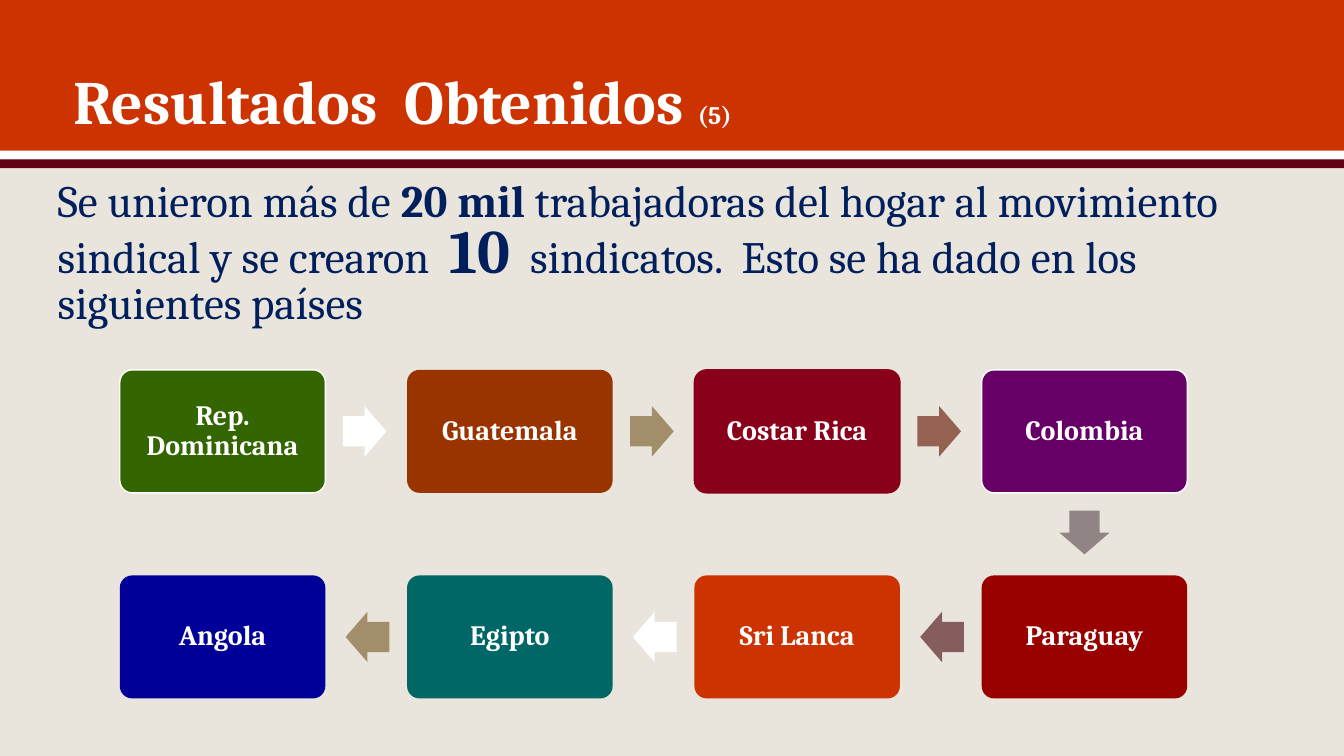
from pptx import Presentation
from pptx.dml.color import RGBColor
from pptx.enum.shapes import MSO_SHAPE
from pptx.enum.text import MSO_ANCHOR, MSO_AUTO_SIZE, PP_ALIGN
from pptx.oxml.ns import qn
from pptx.util import Cm, Pt
from lxml import etree

RECTANGLE = MSO_SHAPE.RECTANGLE
ROUNDED = MSO_SHAPE.ROUNDED_RECTANGLE
ARROW = MSO_SHAPE.RIGHT_ARROW
MIDDLE, BOTTOM = MSO_ANCHOR.MIDDLE, MSO_ANCHOR.BOTTOM
LEFT, CENTER = PP_ALIGN.LEFT, PP_ALIGN.CENTER
NO_AUTOFIT = MSO_AUTO_SIZE.NONE

COLORS = {
    "background": "E9E5DC", "orange": "CC3300", "white": "FFFFFF",
    "wine": "600012", "navy": "001F5C", "green": "336600",
    "brown": "993300", "crimson": "89001A", "purple": "660066",
    "red": "990000", "teal": "006666", "blue": "000099",
    "sand": "A28E6A", "clay": "956251", "gray": "918485", "mauve": "855D5D",
}


def add_text(paragraph, text, size=20, color="white", bold=True):
    run = paragraph.add_run()
    run.text = text
    run.font.name = "Cambria"
    run.font.size = Pt(size)
    run.font.bold = bold
    run.font.color.rgb = RGBColor.from_string(COLORS[color])


def add_shape(kind, left, top, width, height, fill, line=None):
    shape = slide.shapes.add_shape(kind, Cm(left), Cm(top), Cm(width), Cm(height))
    shape.shadow.inherit = False
    shape.fill.solid()
    shape.fill.fore_color.rgb = RGBColor.from_string(COLORS[fill])
    if line:
        shape.line.color.rgb = RGBColor.from_string(COLORS[line])
        shape.line.width = Pt(1)
    else:
        shape.line.fill.background()
    return shape


presentation = Presentation()
presentation.slide_width = Cm(33.87)
presentation.slide_height = Cm(19.05)
slide = presentation.slides.add_slide(presentation.slide_layouts[1])
slide.background.fill.solid()
slide.background.fill.fore_color.rgb = RGBColor.from_string(COLORS["background"])

for top, height, color in [(0, 3.8, "orange"), (3.8, 0.22, "white"), (4.02, 0.22, "wine")]:
    add_shape(RECTANGLE, 0, top, 33.87, height, color)

title = slide.shapes.title
body = slide.placeholders[1]
for placeholder, left, top, width, height, anchor, spacing in [
    (body, 1.2, 4.34, 30.65, 4.22, MIDDLE, 0.8),
    (title, 1.6, 0.72, 31.22, 2.87, BOTTOM, 0.9),
]:
    slide.shapes.element.append(placeholder.element)
    placeholder.left, placeholder.top = Cm(left), Cm(top)
    placeholder.width, placeholder.height = Cm(width), Cm(height)
    frame = placeholder.text_frame
    frame.auto_size = NO_AUTOFIT
    frame.vertical_anchor = anchor
    paragraph = frame.paragraphs[0]
    paragraph.alignment = LEFT
    paragraph.line_spacing = spacing

title_paragraph = title.text_frame.paragraphs[0]
add_text(title_paragraph, "Resultados  Obtenidos ", size=44)
add_text(title_paragraph, "(5)", size=18)

body_paragraph = body.text_frame.paragraphs[0]
body_paragraph.space_before = Pt(12)
for text, size, bold in [
    ("Se unieron más de ", 32, False),
    ("20 mil ", 32, True),
    ("trabajadoras del hogar al movimiento sindical y se crearon  ", 32, False),
    ("10", 44, True),
    ("  sindicatos.  Esto se ha dado en los siguientes países", 32, False),
]:
    add_text(body_paragraph, text, size=size, color="navy", bold=bold)
properties = body_paragraph._p.get_or_add_pPr()
properties.set("marL", "0")
properties.set("indent", "0")
etree.SubElement(properties, qn("a:buNone"))

COLUMNS = 4
BOX_WIDTH, BOX_HEIGHT = 5.18, 3.1
ARROW_WIDTH, ARROW_HEIGHT = 1.1, 1.27
FIRST_LEFT, FIRST_TOP = 3.02, 9.32
COLUMN_STEP, ROW_STEP = 7.24, 5.18

countries = [
    ("Rep. Dominicana", "green", "white", "white"),
    ("Guatemala", "brown", None, "sand"),
    ("Costar Rica", "crimson", "crimson", "clay"),
    ("Colombia", "purple", "white", "gray"),
    ("Paraguay", "red", None, "mauve"),
    ("Sri Lanca", "orange", None, "white"),
    ("Egipto", "teal", None, "sand"),
    ("Angola", "blue", None, None),
]
for index, (country, fill, line, arrow_color) in enumerate(countries):
    row, column = divmod(index, COLUMNS)
    if row == 1:
        column = COLUMNS - 1 - column
    left = FIRST_LEFT + column * COLUMN_STEP
    top = FIRST_TOP + row * ROW_STEP
    box = add_shape(ROUNDED, left, top, BOX_WIDTH, BOX_HEIGHT, fill, line)
    box.adjustments[0] = 0.1
    frame = box.text_frame
    frame.word_wrap = True
    frame.vertical_anchor = MIDDLE
    frame.margin_left = frame.margin_right = Cm(0.3)
    frame.margin_top = frame.margin_bottom = Cm(0.2)
    paragraph = frame.paragraphs[0]
    paragraph.alignment = CENTER
    paragraph.line_spacing = 0.9
    add_text(paragraph, country)

    if arrow_color:
        arrow_top = top + (BOX_HEIGHT - ARROW_HEIGHT) / 2
        if index == COLUMNS - 1:
            arrow_left = left + (BOX_WIDTH - ARROW_WIDTH) / 2
            arrow_top = top + (BOX_HEIGHT + ROW_STEP - ARROW_HEIGHT) / 2 - 0.04
            rotation = 90
        elif row == 0:
            arrow_left, rotation = left + 5.62, 0
        else:
            arrow_left, rotation = left - 1.55, 180
        arrow = add_shape(ARROW, arrow_left, arrow_top, ARROW_WIDTH, ARROW_HEIGHT, arrow_color)
        arrow.adjustments[0] = 0.6
        arrow.adjustments[1] = 0.5
        arrow.rotation = rotation

presentation.save("out.pptx")
